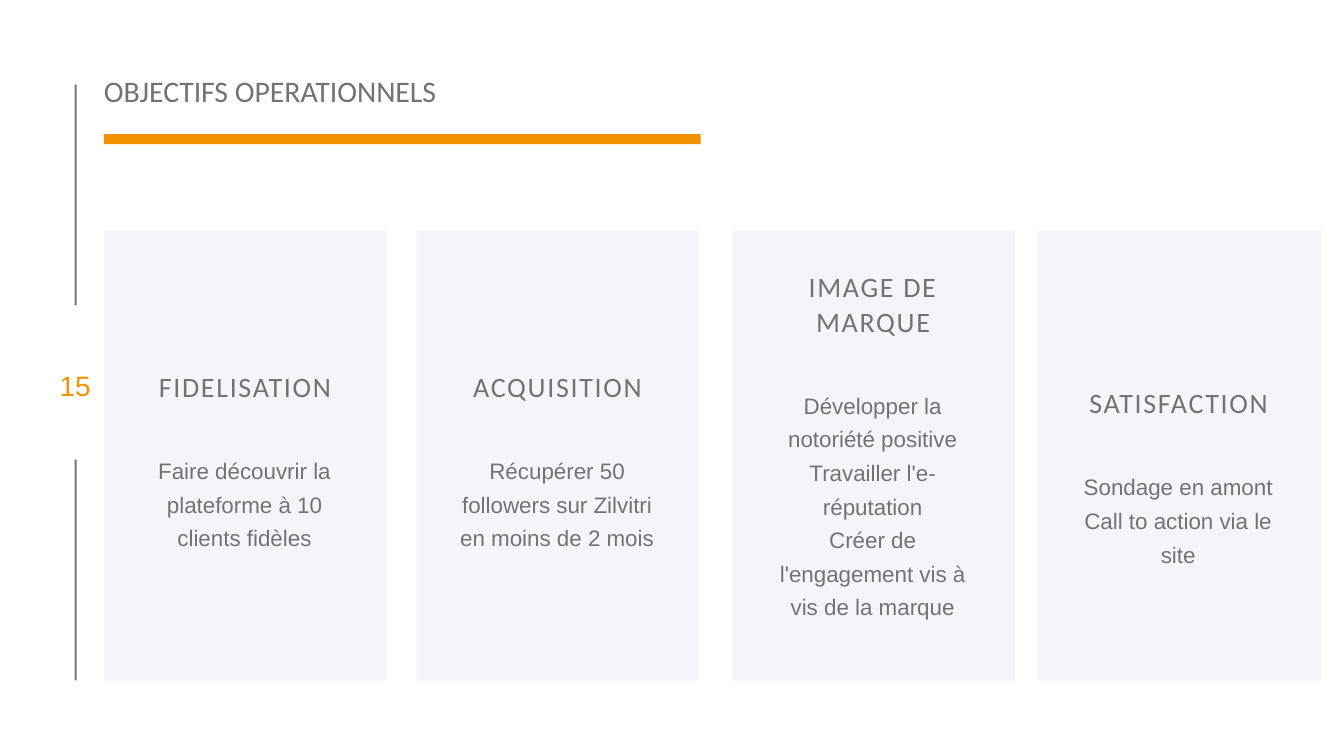
from pptx import Presentation
from pptx.dml.color import RGBColor
from pptx.enum.shapes import MSO_SHAPE
from pptx.enum.text import PP_ALIGN
from pptx.util import Inches, Pt

RECTANGLE = MSO_SHAPE.RECTANGLE
LEFT, CENTER = PP_ALIGN.LEFT, PP_ALIGN.CENTER
GREY, ORANGE, PALE = "737373", "F29200", "F3F5F9"

prs = Presentation()
prs.slide_width, prs.slide_height = Inches(13.33), Inches(7.5)
slide = prs.slides.add_slide(prs.slide_layouts[6])


def add_block(left, top, width, height, color):
    block = slide.shapes.add_shape(
        RECTANGLE, Inches(left), Inches(top), Inches(width), Inches(height))
    block.shadow.inherit = False
    block.fill.solid()
    block.fill.fore_color.rgb = RGBColor.from_string(color)
    block.line.fill.background()


def add_text(text, left, top, width, height, size, leading,
             font="Arial", color=GREY, align=CENTER, tracking=0):
    frame = slide.shapes.add_textbox(
        Inches(left), Inches(top), Inches(width), Inches(height)).text_frame
    frame.word_wrap = True
    frame.margin_left = frame.margin_right = 0
    frame.margin_top = frame.margin_bottom = 0
    frame.text = text
    for paragraph in frame.paragraphs:
        paragraph.alignment = align
        paragraph.line_spacing = Pt(leading)
        for run in paragraph.runs:
            run.font.name = font
            run.font.size = Pt(size)
            run.font.color.rgb = RGBColor.from_string(color)
            if tracking:
                run.font._element.set("spc", str(round(tracking * 100)))


for rule_top in (0.84, 4.56):
    add_block(0.74, rule_top, 0.02, 2.19, GREY)
add_text("15", 0.47, 3.6, 0.55, 0.39, 20, 28, color=ORANGE)

add_block(1.03, 1.33, 5.92, 0.1, ORANGE)
add_text("OBJECTIFS OPERATIONNELS", 1.03, 0.77, 5.92, 0.31, 21.3, 22.2,
         font="Calibri", align=LEFT)

objectives = [
    (1.03, 3.65, 0.35, "FIDELISATION", 1.01,
     "Faire découvrir la plateforme à 10 clients fidèles"),
    (4.13, 3.65, 0.35, "ACQUISITION", 1.01,
     "Récupérer 50 followers sur Zilvitri en moins de 2 mois"),
    (7.26, 2.65, 0.7, "IMAGE DE MARQUE", 2.35,
     "Développer la notoriété positive\n"
     "Travailler l'e-réputation\n"
     "Créer de l'engagement vis à vis de la marque"),
    (10.29, 3.81, 0.35, "SATISFACTION", 1.01,
     "Sondage en amont\nCall to action via le site"),
]
for left, top, heading_height, heading, goal_height, goals in objectives:
    add_block(left, 2.29, 2.81, 4.46, PALE)
    add_text(heading, left + 0.17, top, 2.46, heading_height, 20, 25.4,
             font="Calibri", tracking=1.2)
    add_text(goals, left + 0.34, top + heading_height + 0.47, 2.11,
             goal_height, 16, 24)

prs.save("out.pptx")
